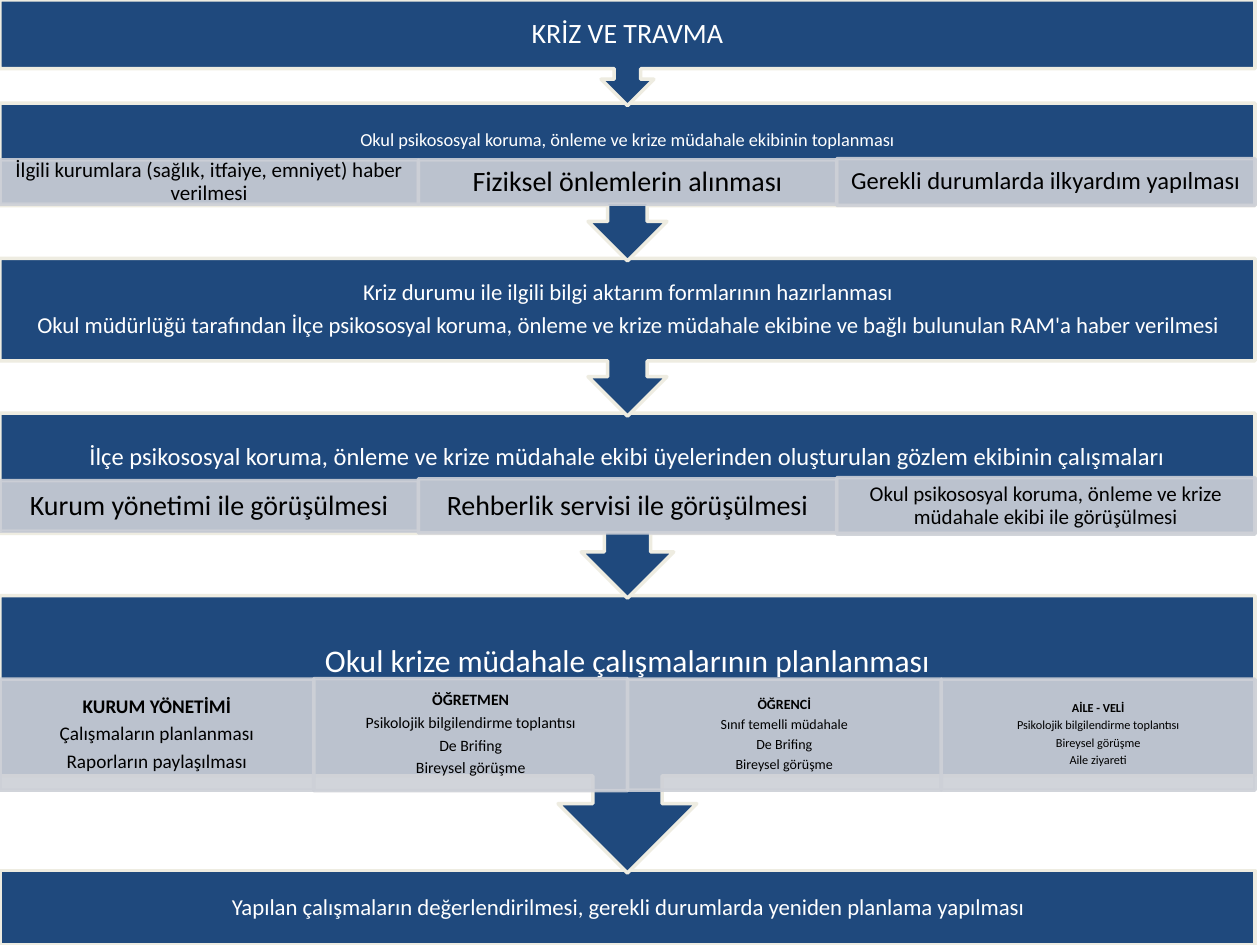
from lxml import etree
from pptx import Presentation
from pptx.dml.color import RGBColor
from pptx.enum.shapes import MSO_SHAPE
from pptx.enum.text import MSO_ANCHOR, PP_ALIGN
from pptx.oxml.ns import qn
from pptx.util import Cm, Pt

RECTANGLE = MSO_SHAPE.RECTANGLE
CALLOUT = MSO_SHAPE.DOWN_ARROW_CALLOUT
MIDDLE = MSO_ANCHOR.MIDDLE
CENTER = PP_ALIGN.CENTER

FONT = "Calibri"
NAVY, CREAM, GREY = "1F497D", "EEECE1", "CDD0D7"
WHITE, BLACK = "FFFFFF", "000000"
FLOW_WIDTH = 25.3
INSET_PER_POINT = 0.02

# Top, height, text size and lines of each step, in cm and points.
STEPS = [
    {"top": 0, "height": 2.13, "size": 16, "lines": ["KRİZ VE TRAVMA"]},
    {"top": 2.08, "height": 3.18, "size": 10.5,
     "lines": ["Okul psikososyal koruma, önleme ve krize müdahale ekibinin toplanması"],
     "cell_middle": 3.67,
     "cells": [
         (0.89, 12, ["İlgili kurumlara (sağlık, itfaiye, emniyet) haber verilmesi"]),
         (0.89, 16, ["Fiziksel önlemlerin alınması"]),
         (0.94, 14, ["Gerekli durumlarda ilkyardım yapılması"]),
     ]},
    {"top": 5.21, "height": 3.18, "size": 13,
     "lines": ["Kriz durumu ile ilgili bilgi aktarım formlarının hazırlanması",
               "Okul müdürlüğü tarafından İlçe psikososyal koruma, önleme ve krize "
               "müdahale ekibine ve bağlı bulunulan RAM'a haber verilmesi"]},
    {"top": 8.33, "height": 3.73, "size": 14,
     "lines": ["İlçe psikososyal koruma, önleme ve krize müdahale ekibi üyelerinden "
               "oluşturulan gözlem ekibinin çalışmaları"],
     "cell_middle": 10.2,
     "cells": [
         (1.02, 16, ["Kurum yönetimi ile görüşülmesi"]),
         (1.09, 16, ["Rehberlik servisi ile görüşülmesi"]),
         (1.14, 12, ["Okul psikososyal koruma, önleme ve krize müdahale ekibi ile görüşülmesi"]),
     ]},
    {"top": 12.01, "height": 5.59, "size": 18,
     "lines": ["Okul krize müdahale çalışmalarının planlanması"],
     "cell_middle": 14.81,
     "cells": [
         (2.24, 11, ["KURUM YÖNETİMİ", "Çalışmaların planlanması", "Raporların paylaşılması"]),
         (2.26, 9, ["ÖĞRETMEN", "Psikolojik bilgilendirme toplantısı", "De Brifing",
                    "Bireysel görüşme"]),
         (2.24, 8, ["ÖĞRENCİ", "Sınıf temelli müdahale", "De Brifing", "Bireysel görüşme"]),
         (2.24, 7, ["AİLE - VELİ", "Psikolojik bilgilendirme toplantısı", "Bireysel görüşme",
                    "Aile ziyareti"]),
     ]},
    {"top": 17.55, "height": 1.5, "size": 13, "shape": RECTANGLE,
     "lines": ["Yapılan çalışmaların değerlendirilmesi, gerekli durumlarda yeniden "
               "planlama yapılması"]},
]


def color(hex_code):
    return RGBColor.from_string(hex_code)


def add_box(page, kind, left, top, width, height, fill, line):
    box = page.shapes.add_shape(kind, Cm(left), Cm(top), Cm(width), Cm(height))
    box.shadow.inherit = False
    box.fill.solid()
    box.fill.fore_color.rgb = color(fill)
    box.line.color.rgb = color(line)
    box.line.width = Pt(2)
    return box


def set_opacity(box, percent):
    """Apply the opacity to both the fill and the outline."""
    for rgb in box.element.spPr.iter(qn("a:srgbClr")):
        etree.SubElement(rgb, qn("a:alpha"), val=str(percent * 1000))


def write_text(box, lines, *, size, font_color, top=0.05, bottom=0.05, bold_first=False):
    frame = box.text_frame
    frame.word_wrap = True
    frame.vertical_anchor = MIDDLE
    frame.margin_left = frame.margin_right = Cm(INSET_PER_POINT * size)
    frame.margin_top, frame.margin_bottom = Cm(top), Cm(bottom)
    for index, line in enumerate(lines):
        para = frame.add_paragraph() if index else frame.paragraphs[0]
        para.alignment = CENTER
        para.line_spacing = 0.9
        para.space_after = Pt(0.35 * size)
        span = para.add_run()
        span.text = line
        span.font.name = FONT
        span.font.size = Pt(size)
        span.font.bold = bold_first and index == 0
        span.font.color.rgb = color(font_color)


def add_band(page, step):
    """Add a step's band; its text moves up when cells cover the lower part."""
    band = add_box(page, step.get("shape", CALLOUT), 0, step["top"], FLOW_WIDTH,
                   step["height"], NAVY, CREAM)
    covered = 0.17 * step["height"] if "cells" in step else 0
    inset = INSET_PER_POINT * step["size"]
    write_text(band, step["lines"], size=step["size"], font_color=WHITE,
               top=inset, bottom=inset + covered)


def add_cells(page, cells, middle):
    width = FLOW_WIDTH / len(cells)
    for column, (height, size, lines) in enumerate(cells):
        cell = add_box(page, RECTANGLE, column * width, middle - height / 2,
                       width, height, GREY, GREY)
        set_opacity(cell, 90)
        write_text(cell, lines, size=size, font_color=BLACK, bold_first=len(lines) > 1)


def main():
    deck = Presentation()
    deck.slide_width, deck.slide_height = Cm(25.4), Cm(19.05)
    page = deck.slides.add_slide(deck.slide_layouts[6])
    # Each arrow tip lies over the step below it.
    for step in reversed(STEPS):
        add_band(page, step)
        if "cells" in step:
            add_cells(page, step["cells"], step["cell_middle"])
    deck.save("out.pptx")


if __name__ == "__main__":
    main()
